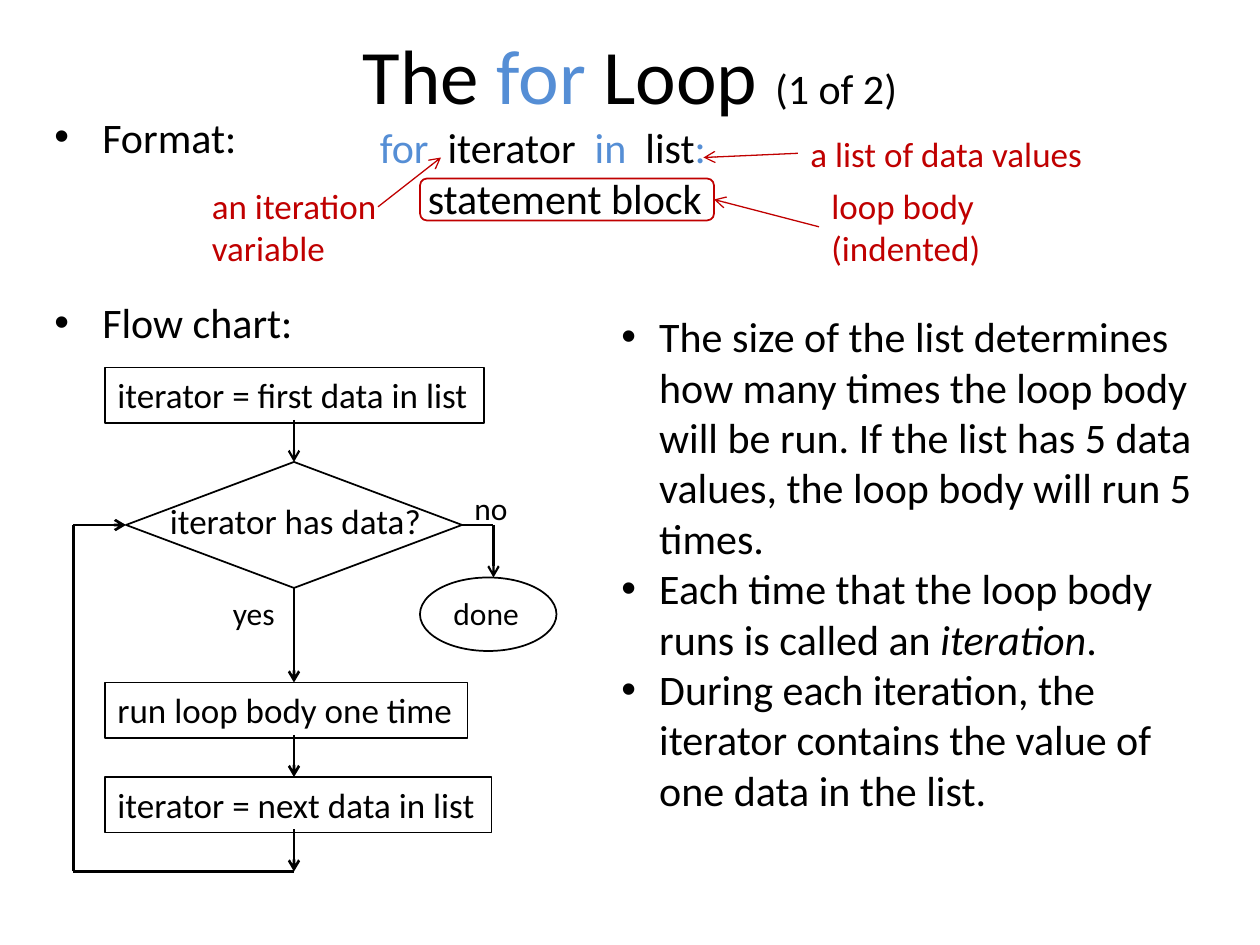
from lxml import etree
from pptx import Presentation
from pptx.dml.color import RGBColor
from pptx.enum.shapes import MSO_CONNECTOR, MSO_SHAPE
from pptx.enum.text import MSO_ANCHOR, PP_ALIGN
from pptx.oxml.ns import qn
from pptx.util import Inches, Pt

LINE = MSO_CONNECTOR.STRAIGHT
RECT = MSO_SHAPE.RECTANGLE
ROUND = MSO_SHAPE.ROUNDED_RECTANGLE
OVAL = MSO_SHAPE.OVAL
TEST = MSO_SHAPE.FLOWCHART_DECISION
MID, TOP = MSO_ANCHOR.MIDDLE, MSO_ANCHOR.TOP
LEFT, CENTER = PP_ALIGN.LEFT, PP_ALIGN.CENTER
FONT = "Calibri"
BLACK, BLUE, RED = "000000", "558ED5", "C00000"
COLS, ROWS = 120, 90
UP, WEST, DOWN, EAST = range(4)


def grid(n):
    return Inches(n / 12)


def paint(color, value):
    color.rgb = RGBColor.from_string(value)


def bullet(para, indent):
    props = para._p.get_or_add_pPr()
    props.set("marL", str(Inches(indent)))
    props.set("indent", str(-Inches(indent)))
    etree.SubElement(props, qn("a:buFont")).set("typeface", "Arial")
    etree.SubElement(props, qn("a:buChar")).set("char", "•")


def write(shape, paras, size=20, color=BLACK, wrap=False, align=LEFT,
          anchor=TOP, indent=0, gaps=(), shift=()):
    frame = shape.text_frame
    frame.word_wrap = wrap
    frame.vertical_anchor = anchor
    for i, runs in enumerate(paras):
        para = frame.paragraphs[0] if i == 0 else frame.add_paragraph()
        para.alignment = align
        if i < len(gaps):
            para.space_before = Pt(gaps[i])
        if i < len(shift):
            para._p.get_or_add_pPr().set("marL", str(Inches(shift[i])))
        if indent:
            bullet(para, indent)
        for item in [runs] if isinstance(runs, str) else runs:
            text, form = (item, {}) if isinstance(item, str) else item
            for j, part in enumerate(text.split("\n")):
                if j:
                    para.add_line_break()
                run = para.add_run()
                run.text = part
                run.font.name = FONT
                run.font.size = Pt(form.get("size", size))
                run.font.italic = form.get("italic")
                paint(run.font.color, form.get("color", color))


def label(slide, spot, paras, **form):
    write(slide.shapes.add_textbox(*map(grid, spot)), paras, **form)


def node(slide, kind, spot, text=None, color=BLACK, width=1):
    shape = slide.shapes.add_shape(kind, *map(grid, spot))
    shape.shadow.inherit = False
    shape.fill.background()
    paint(shape.line.color, color)
    shape.line.width = Pt(width)
    if text:
        write(shape, [text])
    return shape


def link(slide, start, end, color=BLACK, width=1.5, head=True,
         source=None, target=None):
    line = slide.shapes.add_connector(LINE, *map(grid, start + end))
    if source:
        line.begin_connect(*source)
    if target:
        line.end_connect(*target)
    paint(line.line.color, color)
    line.line.width = Pt(width)
    if head:
        etree.SubElement(line.line._get_or_add_ln(), qn("a:tailEnd")).set("type", "arrow")
    etree.SubElement(line._element.spPr, qn("a:effectLst"))


def syntax(slide):
    block = node(slide, ROUND, (40, 17, 28, 4), color=RED)
    blue = {"color": BLUE}
    label(slide, (35, 11, 34.5, 11),
          [[("for", blue), "  iterator  ", ("in ", blue), " list", (":", blue)],
           "statement block"], size=24, shift=(0, 0.38))
    notes = [((76, 12, 28.5, 5.3), ["a list of data values"]),
             ((19, 17, 19, 9.2), ["an iteration", "variable"]),
             ((78, 17, 16.8, 9.2), ["loop body\n(indented)"])]
    for spot, paras in notes:
        label(slide, spot, paras, color=RED)
    link(slide, (76, 14.6), (67, 15), RED, 0.75)
    link(slide, (36, 19.7), (42, 15), RED, 0.75)
    link(slide, (78, 21.6), (68, 19), RED, 0.75, target=(block, EAST))


def chart(slide):
    axis, back, low, exit = 28, 7, 83, 47
    for top, wide, text in [(35, 36.1, "iterator = first data in list"),
                            (65, 34.5, "run loop body one time"),
                            (74, 36.8, "iterator = next data in list")]:
        node(slide, RECT, (10, top, wide, 5.3), text, width=0.75)
    node(slide, OVAL, (40, 55, 13, 7))
    test = node(slide, TEST, (12, 44, 32, 12))
    for spot, text, size in [((42, 56, 9, 4.8), "done", 18),
                             ((15, 47, 26.6, 5.3), "iterator has data?", 20),
                             ((44, 46, 5.6, 4.8), "no", 18),
                             ((21, 56, 6.5, 4.8), "yes", 18)]:
        label(slide, spot, [text], size=size)
    link(slide, (axis, 40), (axis, 44), width=1.25, target=(test, UP))
    link(slide, (axis, 56), (axis, 65), source=(test, DOWN))
    for top in (70, 79):
        link(slide, (axis, top), (axis, top + 4))
    link(slide, (axis, low), (back, low), head=False)
    link(slide, (back, low), (back, 50), head=False)
    link(slide, (back, 50), (12, 50), target=(test, WEST))
    link(slide, (44, 50), (exit, 50), width=1.25, head=False, source=(test, EAST))
    link(slide, (exit, 50), (exit, 55), width=1.25)


def main():
    deck = Presentation()
    deck.slide_width, deck.slide_height = grid(COLS), grid(ROWS)
    slide = deck.slides.add_slide(deck.slide_layouts[6])
    label(slide, (6, 2, COLS - 12, 10),
          [["The ", ("for", {"color": BLUE}), " Loop ", ("(1 of 2)", {"size": 24})]],
          size=44, wrap=True, align=CENTER, anchor=MID)
    label(slide, (4, 10, 111, 74), ["Format:", "Flow chart:"],
          size=24, wrap=True, indent=0.38, gaps=(4, 77))
    syntax(slide)
    label(slide, (58, 29, 57, 49.7),
          ["The size of the list determines how many times the loop body will be run. "
           "If the list has 5 data values, the loop body will run 5 times.",
           ["Each time that the loop body runs is called an ",
            ("iteration", {"italic": True}), "."],
           "During each iteration, the iterator contains the value of one data in the list."],
          size=24, wrap=True, indent=0.3)
    chart(slide)
    deck.save("out.pptx")


if __name__ == "__main__":
    main()
